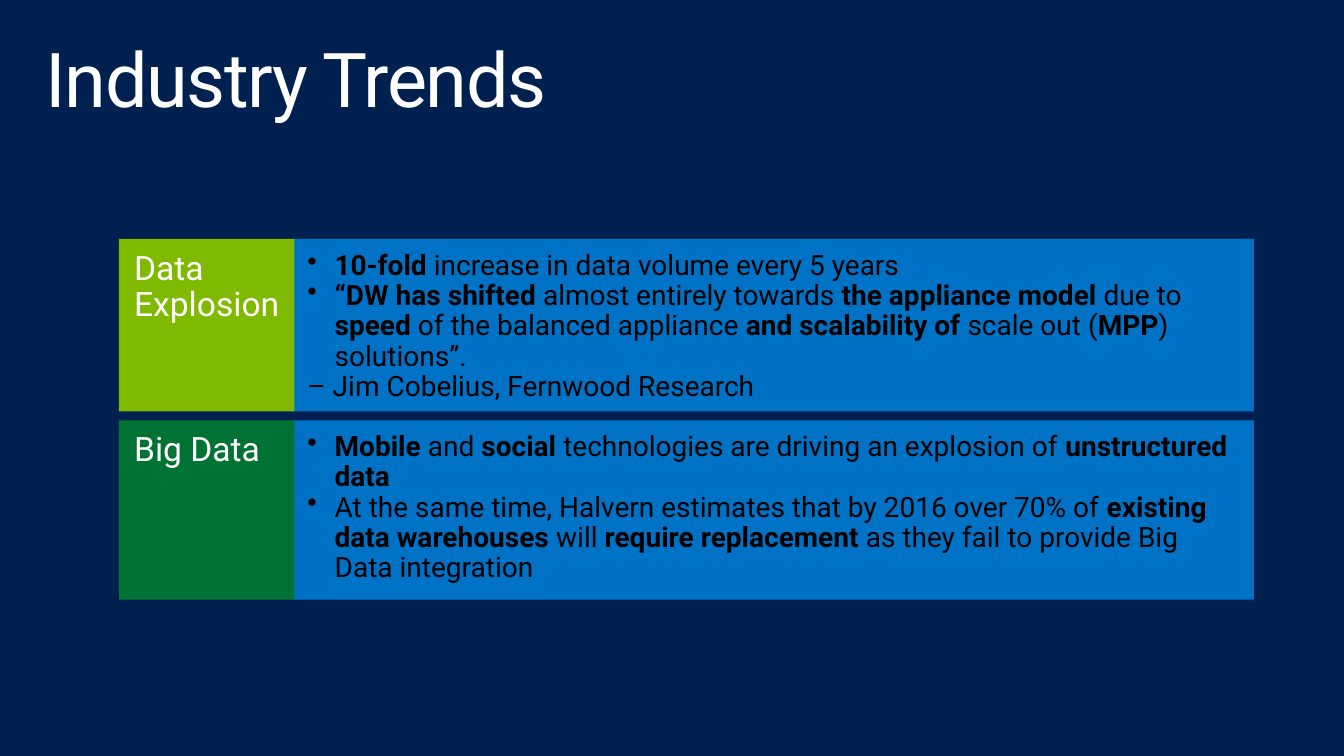
from dataclasses import dataclass

import lxml.etree
import pptx
import pptx.dml.color
import pptx.enum.shapes
import pptx.enum.text
import pptx.oxml.ns
import pptx.util

Pt = pptx.util.Pt
RGBColor = pptx.dml.color.RGBColor

NAVY = RGBColor(0x00, 0x20, 0x50)
BLUE = RGBColor(0x00, 0x72, 0xC6)
LIME = RGBColor(0x7F, 0xBA, 0x00)
GREEN = RGBColor(0x00, 0x72, 0x33)
WHITE = RGBColor(0xFF, 0xFF, 0xFF)
BLACK = RGBColor(0x00, 0x00, 0x00)

FONT = "Roboto"
LABEL_LEFT, LABEL_WIDTH = 85, 125.3
DETAIL_LEFT, DETAIL_WIDTH = 208.8, 686.9
BULLET_INDENT = 19.44


@dataclass(frozen=True)
class Phrase:
    text: str
    bold: bool = False


@dataclass(frozen=True)
class Line:
    phrases: tuple[Phrase, ...]
    bulleted: bool = False


@dataclass(frozen=True)
class Trend:
    name: str
    color: RGBColor
    top: float
    height: float
    details: tuple[Line, ...]


TRENDS = (
    Trend("Data Explosion", LIME, 170.7, 123.1, (
        Line((Phrase("10-fold", True),
              Phrase(" increase in data volume every 5 years")), True),
        Line((Phrase("“DW has shifted ", True),
              Phrase("almost entirely towards "),
              Phrase("the appliance model ", True),
              Phrase("due to "),
              Phrase("speed", True),
              Phrase(" of the balanced appliance "),
              Phrase("and scalability of", True),
              Phrase(" scale out ("),
              Phrase("MPP", True),
              Phrase(") solutions”.")), True),
        Line((Phrase("– Jim Cobelius, Fernwood Research"),)),
    )),
    Trend("Big Data", GREEN, 300.2, 128.2, (
        Line((Phrase("Mobile ", True),
              Phrase("and "),
              Phrase("social ", True),
              Phrase("technologies are driving an explosion of "),
              Phrase("unstructured data", True)), True),
        Line((Phrase("At the same time, Halvern estimates that by 2016 over 70% of "),
              Phrase("existing data warehouses ", True),
              Phrase("will "),
              Phrase("require replacement ", True),
              Phrase("as they fail to provide Big Data integration")), True),
    )),
)


def add_bullet(paragraph) -> None:
    properties = paragraph._p.get_or_add_pPr()
    properties.set("marL", str(Pt(BULLET_INDENT)))
    properties.set("indent", str(-Pt(BULLET_INDENT)))
    bullet = lxml.etree.SubElement(properties, pptx.oxml.ns.qn("a:buChar"))
    bullet.set("char", "•")


def write_lines(frame, lines: tuple[Line, ...], size: float, color: RGBColor,
                side_inset: float, end_inset: float, tracking: int = 0) -> None:
    frame.word_wrap = True
    frame.vertical_anchor = pptx.enum.text.MSO_ANCHOR.TOP
    frame.margin_left = frame.margin_right = Pt(side_inset)
    frame.margin_top = frame.margin_bottom = Pt(end_inset)
    for index, line in enumerate(lines):
        paragraph = frame.add_paragraph() if index else frame.paragraphs[0]
        paragraph.alignment = pptx.enum.text.PP_ALIGN.LEFT
        paragraph.line_spacing = 0.9
        if line.bulleted:
            add_bullet(paragraph)
        for phrase in line.phrases:
            run = paragraph.add_run()
            run.text = phrase.text
            run.font.name = FONT
            run.font.size = Pt(size)
            run.font.bold = phrase.bold
            run.font.color.rgb = color
            if tracking:
                run._r.get_or_add_rPr().set("spc", str(tracking * 100))


def add_panel(slide, left: float, top: float, width: float, height: float,
              fill: RGBColor, lines: tuple[Line, ...], size: float,
              color: RGBColor) -> None:
    panel = slide.shapes.add_shape(pptx.enum.shapes.MSO_SHAPE.RECTANGLE,
                                   Pt(left), Pt(top), Pt(width), Pt(height))
    panel.shadow.inherit = False
    panel.fill.solid()
    panel.fill.fore_color.rgb = fill
    panel.line.fill.background()
    write_lines(panel.text_frame, lines, size, color, 10.8, 8.64)


def add_trend(slide, trend: Trend) -> None:
    add_panel(slide, DETAIL_LEFT, trend.top, DETAIL_WIDTH, trend.height,
              BLUE, trend.details, 20, BLACK)
    add_panel(slide, LABEL_LEFT, trend.top, LABEL_WIDTH, trend.height,
              trend.color, (Line((Phrase(trend.name),)),), 24, WHITE)


def main() -> None:
    deck = pptx.Presentation()
    deck.slide_width, deck.slide_height = Pt(960), Pt(540)
    slide = deck.slides.add_slide(deck.slide_layouts[6])
    slide.background.fill.solid()
    slide.background.fill.fore_color.rgb = NAVY

    heading = slide.shapes.add_textbox(Pt(21), Pt(23), Pt(918), Pt(70.6))
    write_lines(heading.text_frame, (Line((Phrase("Industry Trends"),)),),
                54, WHITE, 11.5, 7.2, tracking=-1)
    for trend in TRENDS:
        add_trend(slide, trend)
    deck.save("out.pptx")


if __name__ == "__main__":
    main()
